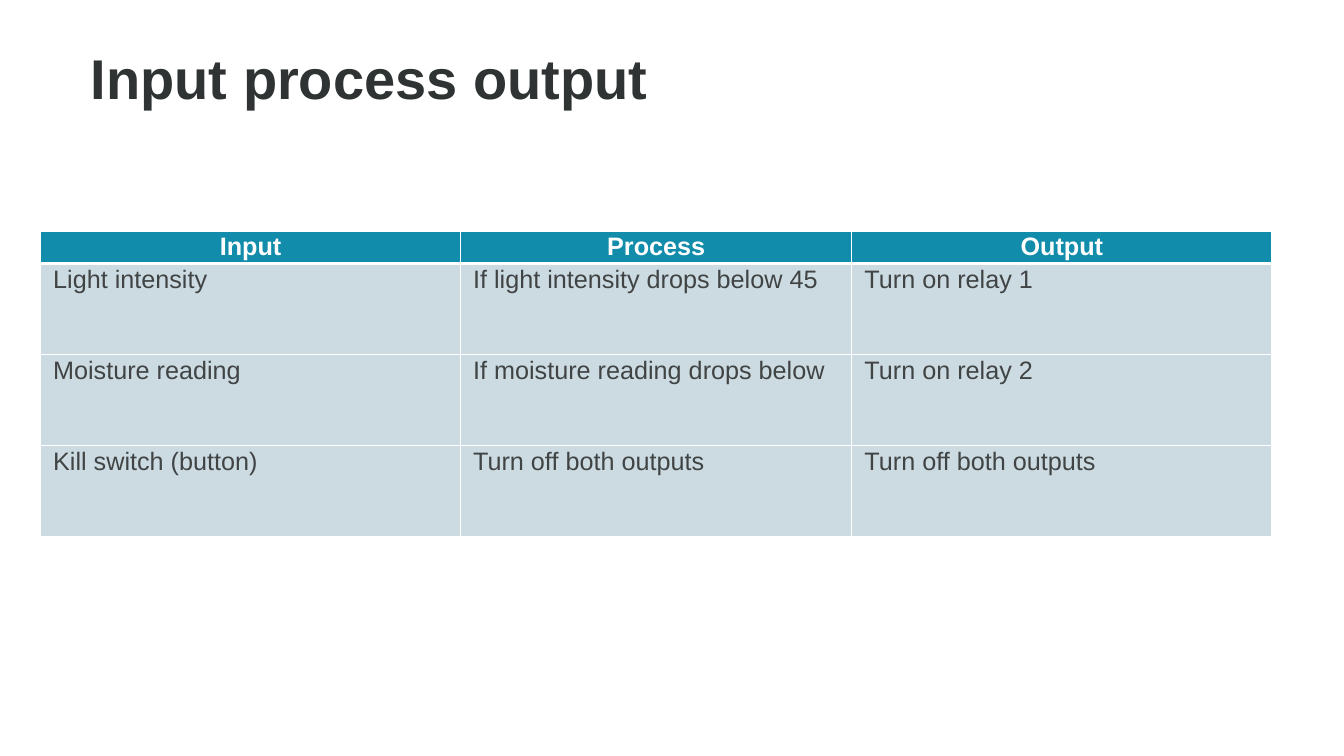
from lxml import etree
from pptx import Presentation
from pptx.dml.color import RGBColor as RGB
from pptx.enum.text import MSO_ANCHOR as Anchor, PP_ALIGN as Align
from pptx.oxml.ns import qn
from pptx.util import Pt

HEX = {"title": "303333", "head": "128CAB", "body": "CCDBE2",
       "text": "414444", "white": "FFFFFF"}
WIDTHS = [300, 279.5, 300]
HEIGHTS = [20.4, 65, 65, 65]
ROWS = [
    ["Input", "Process", "Output"],
    ["Light intensity", "If light intensity drops below 45", "Turn on relay 1"],
    ["Moisture reading", "If moisture reading drops below", "Turn on relay 2"],
    ["Kill switch (button)", "Turn off both outputs", "Turn off both outputs"],
]


def style(para, size, color, bold):
    para.line_spacing = 1.07
    font = para.runs[0].font
    font.name, font.size, font.bold = "Arial", Pt(size), bold
    font.color.rgb = RGB.from_string(HEX[color])


def border(cell, side, width):
    """Add a white line to one side; call before the cell gets its fill."""
    line = etree.SubElement(cell._tc.get_or_add_tcPr(), qn("a:ln" + side),
                            w=str(Pt(width)))
    fill = etree.SubElement(line, qn("a:solidFill"))
    etree.SubElement(fill, qn("a:srgbClr"), val=HEX["white"])


deck = Presentation()
deck.slide_width, deck.slide_height = Pt(960), Pt(540)
slide = deck.slides.add_slide(deck.slide_layouts[6])

title = slide.shapes.add_textbox(Pt(65), Pt(28), Pt(798), Pt(44)).text_frame
title.word_wrap = True
title.vertical_anchor = Anchor.TOP
title.margin_left = title.margin_right = 0
title.margin_top = title.margin_bottom = 0
title.text = "Input process output"
style(title.paragraphs[0], 40, "title", True)

table = slide.shapes.add_table(len(ROWS), len(WIDTHS), Pt(29), Pt(165),
                               Pt(sum(WIDTHS)), Pt(sum(HEIGHTS))).table
for col, width in zip(table.columns, WIDTHS):
    col.width = Pt(width)
for r, (texts, height) in enumerate(zip(ROWS, HEIGHTS)):
    table.rows[r].height = Pt(height)
    head = r == 0
    for c, text in enumerate(texts):
        cell = table.cell(r, c)
        cell.margin_left = cell.margin_right = Pt(9)
        cell.margin_top = cell.margin_bottom = 0
        for side in "LRTB":
            thick = (head and side == "B") or (r == 1 and side == "T")
            border(cell, side, 3 if thick else 1)
        cell.fill.solid()
        cell.fill.fore_color.rgb = RGB.from_string(HEX["head" if head else "body"])
        cell.text = text
        para = cell.text_frame.paragraphs[0]
        para.alignment = Align.CENTER if head else Align.LEFT
        style(para, 18, "white" if head else "text", head)

deck.save("out.pptx")
